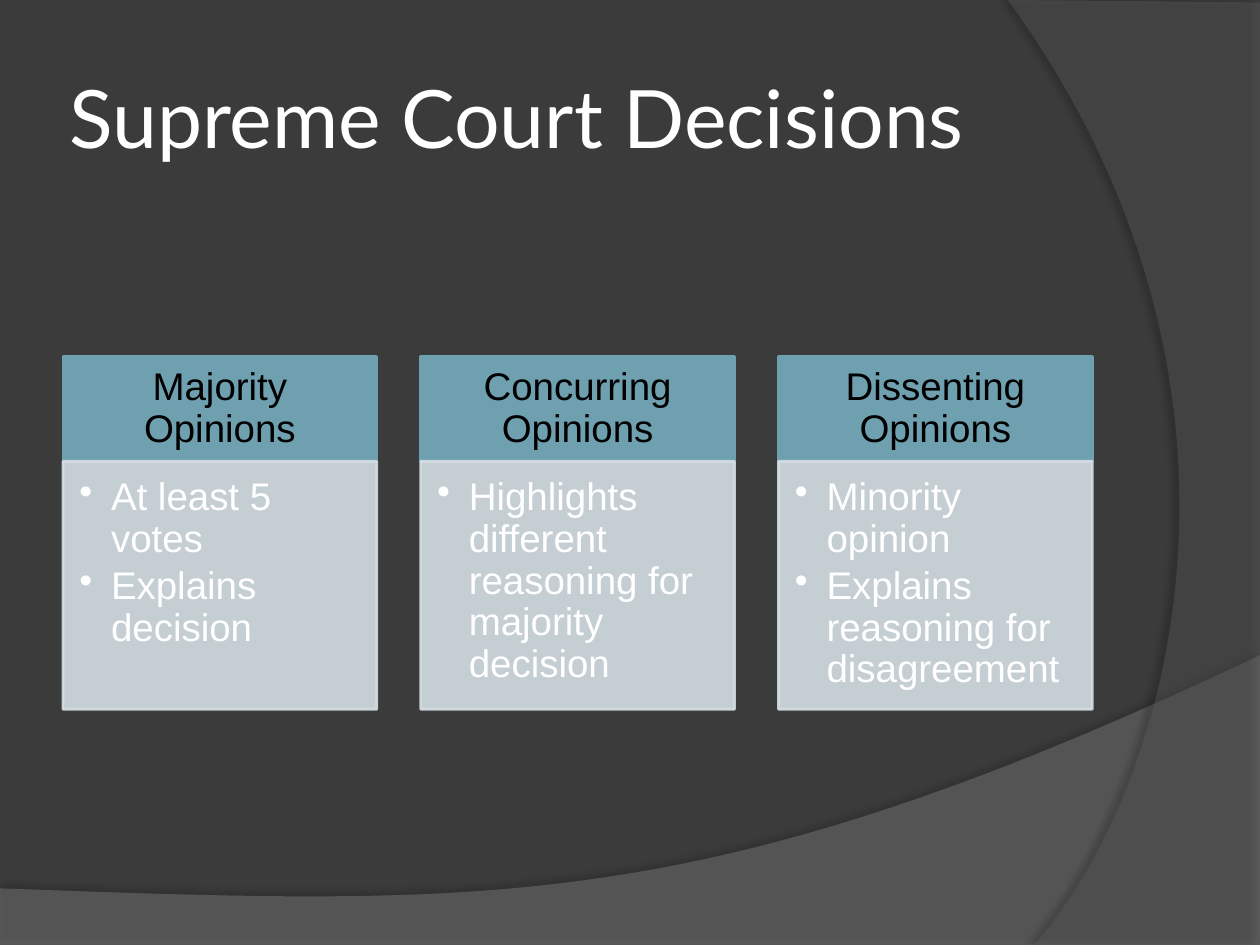
from lxml.etree import SubElement
from pptx import Presentation
from pptx.dml.color import RGBColor
from pptx.enum.shapes import MSO_SHAPE
from pptx.enum.text import MSO_ANCHOR, MSO_AUTO_SIZE, PP_ALIGN
from pptx.oxml.ns import qn
from pptx.util import Cm, Pt

OPINIONS = [
    ("Majority Opinions", ["At least 5 votes", "Explains decision"]),
    ("Concurring Opinions",
     ["Highlights different reasoning for majority decision"]),
    ("Dissenting Opinions",
     ["Minority opinion", "Explains reasoning for disagreement"]),
]
GAP_RATIO = 0.14  # gap between columns, as a share of column width
HEADER_HEIGHT = 2.11

TITLE_FRAME = dict(vertical_anchor=MSO_ANCHOR.MIDDLE, word_wrap=True,
                   auto_size=MSO_AUTO_SIZE.NONE,
                   margin_left=Cm(0.13), margin_right=Cm(0.13),
                   margin_top=Cm(0.13), margin_bottom=Cm(0.13))
HEADER_FRAME = dict(vertical_anchor=MSO_ANCHOR.MIDDLE, word_wrap=True,
                    margin_left=Cm(0.43), margin_right=Cm(0.43),
                    margin_top=Cm(0.25), margin_bottom=Cm(0.25))
BODY_FRAME = dict(vertical_anchor=MSO_ANCHOR.TOP, word_wrap=True,
                  margin_left=Cm(0.33), margin_right=Cm(0.43),
                  margin_top=Cm(0.33), margin_bottom=Cm(0.48))
TITLE_FONT = dict(name="Lato", size=Pt(46))
COLUMN_FONT = dict(name="Arial", size=Pt(22))
HEADER_PARAGRAPH = dict(alignment=PP_ALIGN.CENTER, line_spacing=0.9)
BODY_PARAGRAPH = dict(alignment=PP_ALIGN.LEFT, line_spacing=0.9,
                      space_after=Pt(3.3), level=1)


def rgb(value):
    return RGBColor.from_string(value)


def apply(target, values):
    for key, value in values.items():
        setattr(target, key, value)


def paint(fill, color, opacity=100):
    fill.solid()
    fill.fore_color.rgb = rgb(color)
    if opacity < 100:
        color_node = fill._xPr.find(qn("a:solidFill"))[0]
        SubElement(color_node, qn("a:alpha"), val=str(opacity * 1000))


def write(frame, lines, frame_format, paragraph_format, font_format, color):
    apply(frame, frame_format)
    frame.text = "\n".join(lines)
    for paragraph in frame.paragraphs:
        apply(paragraph, paragraph_format)
        font = paragraph.runs[0].font
        apply(font, font_format)
        font.color.rgb = rgb(color)


def add_bullet(paragraph):
    properties = paragraph._p.get_or_add_pPr()
    indent = Cm(0.64)
    properties.set("marL", str(indent))
    properties.set("indent", str(-indent))
    SubElement(properties, qn("a:buChar"), char="•")


def add_shadow(shape, opacity, distance, angle):
    shape.shadow.inherit = False
    effects = shape._element.spPr.find(qn("a:effectLst"))
    shadow = SubElement(effects, qn("a:outerShdw"), blurRad=str(Pt(4)),
                        dist=str(Pt(distance)), dir=str(angle * 60000),
                        algn="ctr", rotWithShape="0")
    black = SubElement(shadow, qn("a:srgbClr"), val="000000")
    SubElement(black, qn("a:alpha"), val=str(opacity * 1000))


def curve(start, control_1, control_2, end, steps=60):
    """Points along a cubic Bezier curve."""
    for step in range(steps + 1):
        t = step / steps
        weights = ((1 - t) ** 3, 3 * t * (1 - t) ** 2,
                   3 * t ** 2 * (1 - t), t ** 3)
        yield tuple(sum(w * v for w, v in zip(weights, axis))
                    for axis in zip(start, control_1, control_2, end))


def add_sweep(slide, box, corners, bend, color, opacity, shadow):
    """A translucent background area, closed by a curved edge."""
    left, top = box
    points = [(Cm(left + x), Cm(top + y))
              for x, y in [*corners, *curve(*bend)]]
    builder = slide.shapes.build_freeform(*points[0])
    builder.add_line_segments(points[1:], close=True)
    sweep = builder.convert_to_shape()
    paint(sweep.fill, color, opacity)
    sweep.line.fill.background()
    add_shadow(sweep, **shadow)


def add_background(slide):
    paint(slide.background.fill, "3B3B3B")
    # Wave along the bottom
    add_sweep(slide, (0, 13.21), [(0, 4.7), (0, 5.87), (25.4, 5.87)],
              [(25.4, 0), (14.2, 5.31), (9.93, 5.05), (0, 4.7)],
              "7F7F7F", 45, dict(opacity=35, distance=3.5, angle=270))
    # Arc along the right edge
    add_sweep(slide, (20.32, 0), [(5.08, 0.05), (5.08, 19.05)],
              [(0.53, 19.05), (3.43, 15.72), (5.54, 7.62), (0, 0)],
              "5E5E5E", 40, dict(opacity=45, distance=4, angle=180))


def add_title(slide, box):
    title = slide.shapes.title
    apply(title, dict(zip(("left", "top", "width", "height"), map(Cm, box))))
    write(title.text_frame, ["Supreme Court Decisions"], TITLE_FRAME,
          dict(alignment=PP_ALIGN.LEFT), TITLE_FONT, "FFFFFF")


def add_panel(slide, box, color, opacity=100):
    panel = slide.shapes.add_shape(MSO_SHAPE.RECTANGLE, *map(Cm, box))
    panel.shadow.inherit = False
    paint(panel.fill, color, opacity)
    panel.line.width = Pt(1.5)
    paint(panel.line.fill, color, opacity)
    return panel.text_frame


def add_opinion(slide, box, heading, points):
    left, top, width, height = box
    # Heading
    header = add_panel(slide, (left, top, width, HEADER_HEIGHT), "6EA0B0")
    write(header, [heading], HEADER_FRAME, HEADER_PARAGRAPH,
          COLUMN_FONT, "000000")
    # Bullet list
    body = add_panel(slide, (left, top + HEADER_HEIGHT, width,
                             height - HEADER_HEIGHT), "D5DFE4", 90)
    write(body, points, BODY_FRAME, BODY_PARAGRAPH, COLUMN_FONT, "FFFFFF")
    for paragraph in body.paragraphs:
        add_bullet(paragraph)


def add_opinions(slide, box):
    left, top, width, height = box
    count = len(OPINIONS)
    column_width = width / (count + (count - 1) * GAP_RATIO)
    pitch = column_width * (1 + GAP_RATIO)
    for index, (heading, points) in enumerate(OPINIONS):
        add_opinion(slide, (left + index * pitch, top, column_width, height),
                    heading, points)


def main():
    deck = Presentation()
    deck.slide_width, deck.slide_height = Cm(25.4), Cm(19.05)
    slide = deck.slides.add_slide(deck.slide_layouts[5])
    add_background(slide)
    add_title(slide, (1.27, 0.76, 20.75, 3.18))
    add_opinions(slide, (1.27, 7.19, 20.75, 7.11))
    deck.save("out.pptx")


if __name__ == "__main__":
    main()
